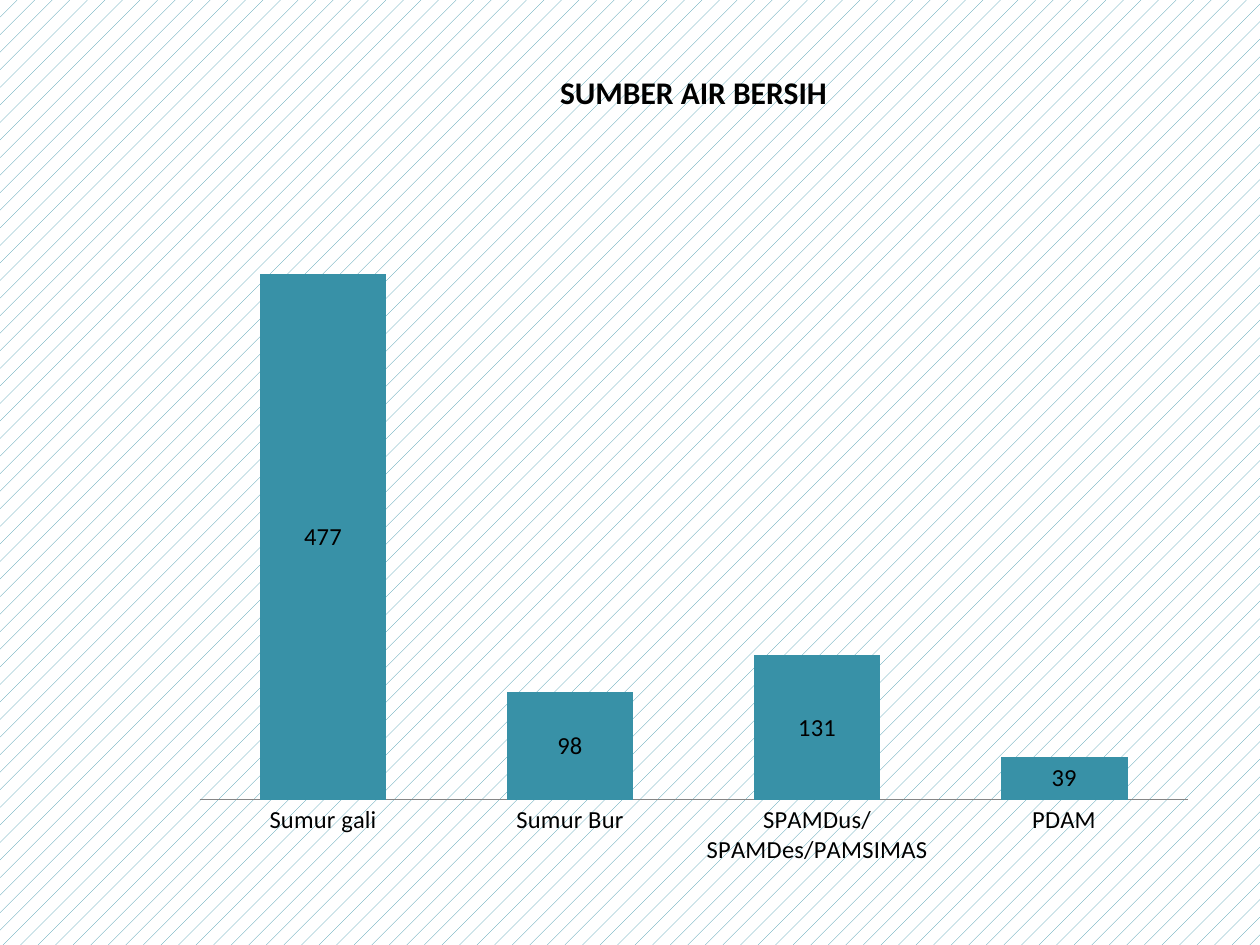
from pptx import Presentation
from pptx.chart.data import CategoryChartData
from pptx.dml.color import RGBColor
from pptx.enum.chart import XL_CHART_TYPE, XL_LABEL_POSITION, XL_TICK_MARK
from pptx.enum.dml import MSO_PATTERN
from pptx.util import Inches, Pt

# Content
TITLE = "SUMBER AIR BERSIH"
WATER_SOURCES = {
    "Sumur gali": 477,
    "Sumur Bur": 98,
    "SPAMDus/ SPAMDes/PAMSIMAS": 131,
    "PDAM": 39,
}
COLORS = {"teal": "3891A7", "white": "FFFFFF", "text": "000000", "axis": "868686"}
FONT = "Calibri"


def color(name):
    return RGBColor.from_string(COLORS[name])


def style_font(font, size, bold=False):
    font.name = FONT
    font.size = Pt(size)
    font.bold = bold
    font.color.rgb = color("text")


deck = Presentation()
deck.slide_width, deck.slide_height = Inches(10), Inches(7.5)
page = deck.slides.add_slide(deck.slide_layouts[6])

# Patterned background
backdrop = page.background.fill
backdrop.patterned()
backdrop.pattern = MSO_PATTERN.PERCENT_5
backdrop.fore_color.rgb = color("teal")
backdrop.back_color.rgb = color("white")

# Column chart
data = CategoryChartData()
data.categories = list(WATER_SOURCES)
data.add_series("Series 1", list(WATER_SOURCES.values()))
chart = page.shapes.add_chart(
    XL_CHART_TYPE.COLUMN_STACKED,
    Inches(1.42), Inches(0.33), Inches(8.17), Inches(6.67), data,
).chart
style_font(chart.font, 10)
chart.has_legend = False

# Chart title
chart.has_title = True
heading = chart.chart_title.text_frame.paragraphs[0].add_run()
heading.text = TITLE
style_font(heading.font, 18, bold=True)
chart.chart_title.include_in_layout = False

# Axes
categories = chart.category_axis
categories.major_tick_mark = XL_TICK_MARK.NONE
categories.minor_tick_mark = XL_TICK_MARK.NONE
categories.format.line.color.rgb = color("axis")
style_font(categories.tick_labels.font, 14)
values = chart.value_axis
values.visible = False
values.has_major_gridlines = False
values.minimum_scale, values.maximum_scale = 0, 600

# Bars and value labels
plot = chart.plots[0]
plot.gap_width, plot.overlap = 95, 100
plot.vary_by_categories = False
bars = plot.series[0]
bars.format.fill.solid()
bars.format.fill.fore_color.rgb = color("teal")
labels = bars.data_labels
labels.show_value = True
labels.position = XL_LABEL_POSITION.CENTER
style_font(labels.font, 14)

deck.save("out.pptx")
